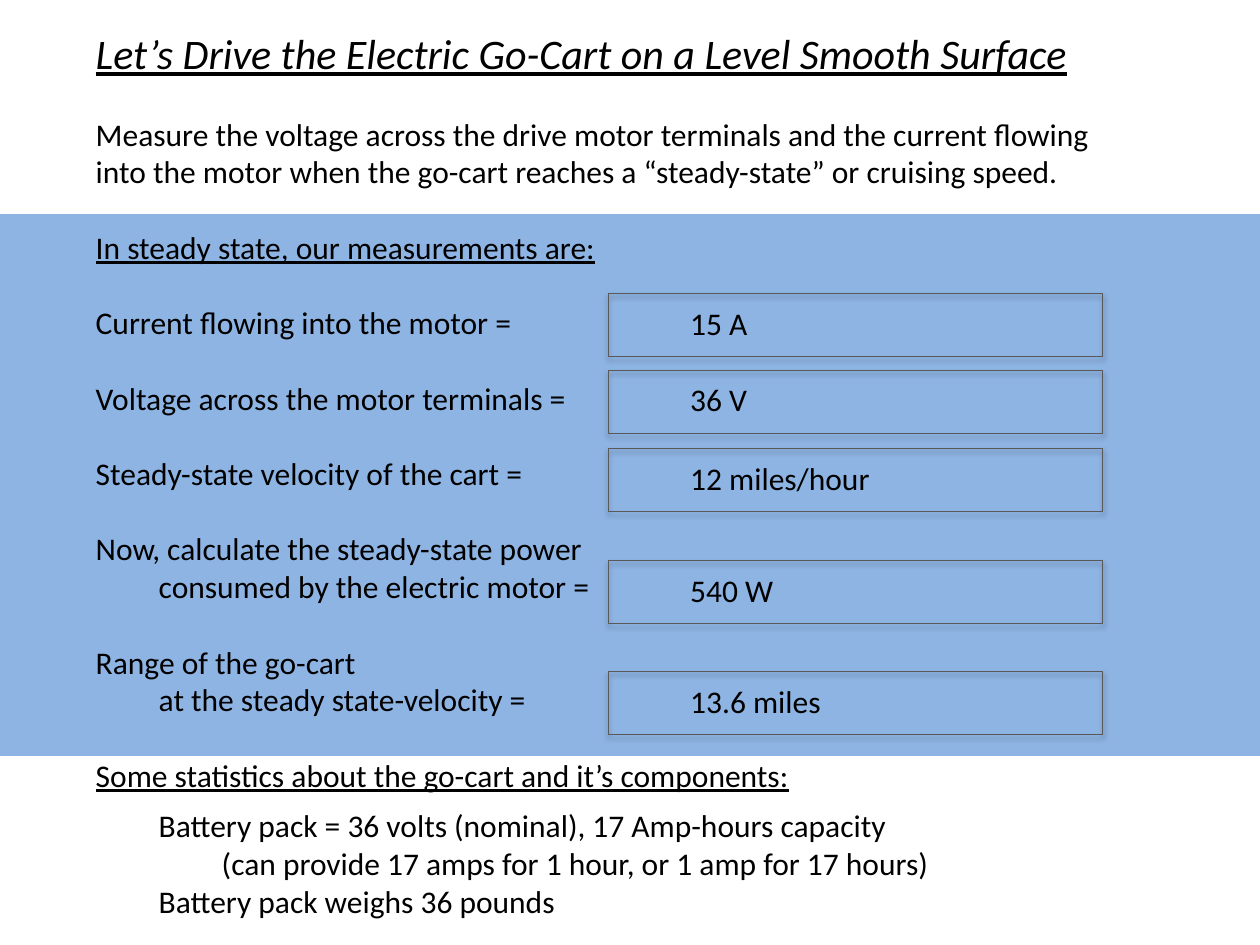
from lxml import etree
from pptx import Presentation
from pptx.dml.color import RGBColor
from pptx.enum.shapes import MSO_SHAPE
from pptx.enum.text import MSO_ANCHOR, MSO_AUTO_SIZE, PP_ALIGN
from pptx.oxml.ns import qn
from pptx.util import Inches, Pt

LEFT = 0.66
LINE_GAP = 21.5
TEXT = {"name": "Calibri", "size": Pt(18)}
UNDERLINED = {**TEXT, "underline": True}
TITLE = {**UNDERLINED, "size": Pt(24), "italic": True}

BODY = [
    ("Measure the voltage across the drive motor terminals and the current flowing "
     "into the motor when the go-cart reaches a “steady-state” or cruising speed.", 0, 0, TEXT),
    ("In steady state, our measurements are:", 0, LINE_GAP, UNDERLINED),
    ("Current flowing into the motor =", 0, LINE_GAP, TEXT),
    ("Voltage across the motor terminals =", 0, LINE_GAP, TEXT),
    ("Steady-state velocity of the cart =", 0, LINE_GAP, TEXT),
    ("Now, calculate the steady-state power", 0, LINE_GAP, TEXT),
    ("consumed by the electric motor =", 1, 0, TEXT),
    ("Range of the go-cart", 0, LINE_GAP, TEXT),
    ("at the steady state-velocity =", 1, 0, TEXT),
    ("Some statistics about the go-cart and it’s components:", 0, LINE_GAP, UNDERLINED),
    ("Battery pack = 36 volts (nominal), 17 Amp-hours capacity", 1, 7, TEXT),
    ("(can provide 17 amps for 1 hour, or 1 amp for 17 hours)", 2, 0, TEXT),
    ("Battery pack weighs 36 pounds", 1, 0, TEXT),
]

RESULTS = [
    ("15 A", 2.33),
    ("36 V", 2.94),
    ("12 miles/hour", 3.56),
    ("540 W", 4.45),
    ("13.6 miles", 5.33),
]


def color(value):
    return RGBColor.from_string(value)


def add_text(p, text, fmt):
    p.alignment = PP_ALIGN.LEFT
    r = p.add_run()
    r.text = text
    r.font.color.rgb = color("000000")
    for key, value in fmt.items():
        setattr(r.font, key, value)


def place(sp, left, top, width, height, anchor=MSO_ANCHOR.TOP):
    sp.left, sp.top, sp.width, sp.height = map(Inches, (left, top, width, height))
    tf = sp.text_frame
    tf.word_wrap = True
    tf.auto_size = MSO_AUTO_SIZE.NONE
    tf.vertical_anchor = anchor
    return tf


def set_indent(p, level):
    p.level = level
    pPr = p._p.get_or_add_pPr()
    pPr.set("marL", str(Inches(level * 0.5)))
    pPr.set("indent", "0")
    etree.SubElement(pPr, qn("a:buNone"))


def fill_body(tf):
    for i, (text, level, gap, fmt) in enumerate(BODY):
        p = tf.add_paragraph() if i else tf.paragraphs[0]
        set_indent(p, level)
        p.space_before = Pt(gap)
        add_text(p, text, fmt)


def add_rect(s, left, top, width, height):
    sp = s.shapes.add_shape(MSO_SHAPE.RECTANGLE, *map(Inches, (left, top, width, height)))
    sp.shadow.inherit = False
    return sp


def add_band(s):
    sp = add_rect(s, 0, 1.7, 10, 4.3)
    sp.fill.solid()
    sp.fill.fore_color.rgb = color("8EB4E3")
    sp.line.fill.background()
    s.shapes._spTree.insert(2, sp._element)


def add_shadow(sp):
    effects = sp._element.spPr.find(qn("a:effectLst"))
    shadow = etree.SubElement(effects, qn("a:outerShdw"), blurRad=str(Pt(3.1)),
                              dist=str(Pt(1.8)), dir="5400000", rotWithShape="0")
    rgb = etree.SubElement(shadow, qn("a:srgbClr"), val="000000")
    etree.SubElement(rgb, qn("a:alpha"), val="35000")


def add_result(s, text, top):
    sp = add_rect(s, 4.83, top, 3.92, 0.5)
    sp.fill.background()
    sp.line.color.rgb = color("595959")
    sp.line.width = Pt(0.75)
    add_shadow(sp)
    value = s.shapes.add_textbox(0, 0, 0, 0)
    tf = place(value, 5.38, top - 0.02, 3.2, 0.5, MSO_ANCHOR.MIDDLE)
    add_text(tf.paragraphs[0], text, TEXT)


def main():
    prs = Presentation()
    prs.slide_width, prs.slide_height = Inches(10), Inches(7.5)
    s = prs.slides.add_slide(prs.slide_layouts[1])
    add_band(s)
    title = place(s.shapes.title, LEFT, 0.17, 8.5, 0.5)
    add_text(title.paragraphs[0], "Let’s Drive the Electric Go-Cart on a Level Smooth Surface", TITLE)
    fill_body(place(s.placeholders[1], LEFT, 0.86, 8.2, 6.5))
    for text, top in RESULTS:
        add_result(s, text, top)
    prs.save("out.pptx")


if __name__ == "__main__":
    main()
